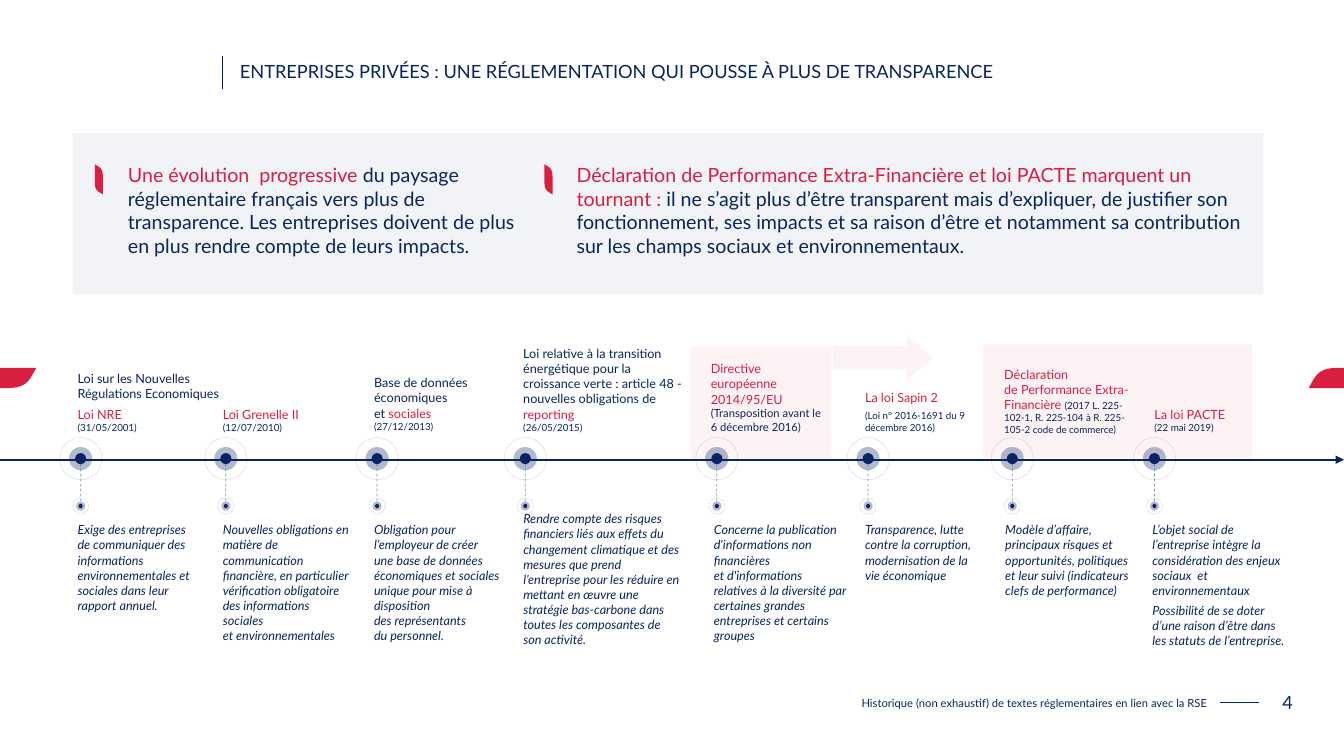
from copy import deepcopy
from dataclasses import dataclass

from lxml import etree
from pptx import Presentation
from pptx.dml.color import RGBColor
from pptx.enum.dml import MSO_LINE
from pptx.enum.shapes import MSO_CONNECTOR, MSO_SHAPE as Shape
from pptx.enum.text import MSO_ANCHOR as Anchor, MSO_AUTO_SIZE, PP_ALIGN as Align
from pptx.oxml.ns import qn
from pptx.util import Inches, Pt


@dataclass(frozen=True)
class Theme:
    font: str = "Lato"
    navy: RGBColor = RGBColor(0x09, 0x24, 0x62)
    red: RGBColor = RGBColor(0xD9, 0x1F, 0x41)
    ring: RGBColor = RGBColor(0x0A, 0x24, 0x63)
    title: int = 13
    callout: int = 14
    label: int = 9
    note: int = 8
    date: int = 7


theme = Theme()
NAVY, RED = theme.navy, theme.red
LABEL, NOTE, DATE = theme.label, theme.note, theme.date


def fill_text(box, paras, anchor=Anchor.TOP, align=Align.LEFT, inset=0.03, italic=False, wrap=True):
    """Write paragraphs of (text, size, colour) spans; a newline in a span is a line break."""
    frame = box.text_frame
    frame.word_wrap, frame.auto_size, frame.vertical_anchor = wrap, MSO_AUTO_SIZE.NONE, anchor
    frame.margin_left = frame.margin_right = Inches(inset)
    frame.margin_top = frame.margin_bottom = Inches(min(inset, 0.05))
    for index, spans in enumerate(paras):
        para = frame.add_paragraph() if index else frame.paragraphs[0]
        para.alignment = align
        if index:
            para.space_before = Pt(3.6)
        for text, size, color in spans:
            for number, piece in enumerate(text.split("\n")):
                if number:
                    para.add_line_break()
                if piece:
                    span = para.add_run()
                    span.text = piece
                    span.font.name, span.font.size = theme.font, Pt(size)
                    span.font.color.rgb, span.font.italic = color, italic
        for line_break in para._p.findall(qn("a:br")):
            line_break.append(deepcopy(para.runs[0]._r.rPr))


def add_preset(kind, place, color, alpha=100, outline=False):
    shape = page.shapes.add_shape(kind, *map(Inches, place))
    shape.shadow.inherit = False
    if outline:
        shape.fill.background()
        shape.line.color.rgb, shape.line.width = color, Pt(0.25)
    else:
        shape.fill.solid()
        shape.fill.fore_color.rgb = color
        shape.line.fill.background()
    if alpha < 100:
        for tint in shape._element.spPr.iter(qn("a:srgbClr")):
            etree.SubElement(tint, qn("a:alpha"), val=str(alpha * 1000))
    return shape


deck = Presentation()
deck.slide_width, deck.slide_height = Inches(13.33), Inches(7.5)
page = deck.slides.add_slide(deck.slide_layouts[5])

title = page.shapes.title
title.left, title.top, title.width, title.height = map(Inches, (2.18, 0.52, 10.32, 0.38))
fill_text(title, [[("ENTREPRISES PRIVÉES : UNE RÉGLEMENTATION QUI POUSSE À PLUS DE TRANSPARENCE",
                    theme.title, NAVY)]], Anchor.MIDDLE, inset=0.1)
title.text_frame.margin_left = Inches(0.2)

# Tinted panels and the arrow between them
add_preset(Shape.RECTANGLE, (6.85, 3.44, 1.4, 1.11), RED, 5)
add_preset(Shape.RECTANGLE, (9.75, 3.42, 2.67, 1.12), RED, 5)
add_preset(Shape.RECTANGLE, (0.72, 1.32, 11.81, 1.6), NAVY, 5)
arrow = add_preset(Shape.RIGHT_ARROW, (8.26, 3.32, 1, 0.46), RED, 5)
arrow.adjustments[1] = 0.585

# Leaves: half an outline, the other half being its point reflection
edge_leaf = [(0, 0.2), (0.44, 0.2), (0.64, 0.2), (0.66, 0.1), (0.72, 0)]
bullet_leaf = [(0.08, 0.3), (0.08, 0.12), (0.08, 0.03), (0.04, 0.03), (0, 0)]
STEPS = 12
for left, top, half in [(-0.36, 3.65, edge_leaf), (12.98, 3.65, edge_leaf),
                        (0.94, 1.63, bullet_leaf), (5.4, 1.63, bullet_leaf)]:
    (width, height) = (max(axis) for axis in zip(*half))
    outline = []
    for side in (half, [(width - x, height - y) for x, y in half]):
        outline.append(side[0])
        for step in range(STEPS + 1):
            t = step / STEPS
            weights = ((1 - t) ** 3, 3 * t * (1 - t) ** 2, 3 * t * t * (1 - t), t ** 3)
            outline.append(tuple(sum(w * p for w, p in zip(weights, axis)) for axis in zip(*side[1:])))
    points = [(Inches(left + x), Inches(top + y)) for x, y in outline]
    builder = page.shapes.build_freeform(*points[0])
    builder.add_line_segments(points[1:], close=True)
    leaf = builder.convert_to_shape()
    leaf.shadow.inherit = False
    leaf.fill.solid()
    leaf.fill.fore_color.rgb = RED
    leaf.line.fill.background()

callouts = [
    ((1.17, 1.57, 4.25, 1.04), "Une évolution  progressive ",
     "du paysage réglementaire français vers plus de transparence. Les entreprises doivent de plus "
     "en plus rendre compte de leurs impacts."),
    ((5.62, 1.57, 6.86, 1.04),
     "Déclaration de Performance Extra-Financière et loi PACTE marquent un tournant :",
     " il ne s’agit plus d’être transparent mais d’expliquer, de justifier son fonctionnement, ses impacts "
     "et sa raison d’être et notamment sa contribution sur les champs sociaux et environnementaux."),
]
for place, lead, rest in callouts:
    box = page.shapes.add_textbox(*map(Inches, place))
    fill_text(box, [[(lead, theme.callout, RED), (rest, theme.callout, NAVY)]], inset=0.1)

# Milestones: marker centre, label place, label paragraphs, description place, description paragraphs
milestones = [
    (0.8, (0.74, 3.4, 1.54, 0.93),
     [[("Loi sur les Nouvelles Régulations Economiques", LABEL, NAVY)],
      [("Loi NRE\n", LABEL, RED), ("(31/05/2001)", DATE, NAVY)]],
     (0.74, 5.15, 1.26, 1.19),
     ["Exige des entreprises \nde communiquer des informations environnementales et sociales "
      "dans leur rapport annuel."]),
    (2.24, (2.18, 3.97, 1.58, 0.36),
     [[("Loi Grenelle II\n", LABEL, RED), ("(12/07/2010)", DATE, NAVY)]],
     (2.18, 5.15, 1.32, 1.04),
     ["Nouvelles obligations en matière de communication financière, en particulier vérification "
      "obligatoire des informations sociales \net environnementales"]),
    (3.74, (3.68, 3.61, 1.18, 0.71),
     [[("Base de données économiques \net ", LABEL, NAVY), ("sociales\n", LABEL, RED),
       ("(27/12/2013)", DATE, NAVY)]],
     (3.68, 5.15, 1.46, 1.39),
     ["Obligation pour l’employeur de créer \nune base de données économiques et sociales unique "
      "pour mise à disposition \ndes représentants \ndu personnel."]),
    (5.21, (5.16, 3.27, 1.67, 1.06),
     [[("Loi relative à la transition énergétique pour la croissance verte : article 48 - "
        "nouvelles obligations de ", LABEL, NAVY), ("reporting\n", LABEL, RED),
       ("(26/05/2015)", DATE, NAVY)]],
     (5.16, 5.04, 1.61, 1.85),
     ["Rendre compte des risques financiers liés aux effets du changement climatique et des mesures "
      "que prend l’entreprise pour les réduire en mettant en œuvre une stratégie bas-carbone dans "
      "toutes les composantes de son activité."]),
    (7.11, (7.02, 3.48, 1.19, 0.85),
     [[("Directive européenne 2014/95/EU ", LABEL, RED),
       ("(Transposition avant le 6 décembre 2016)", NOTE, NAVY)]],
     (7.05, 5.15, 1.39, 1.51),
     ["Concerne la publication d'informations non financières \net d'informations relatives à la "
      "diversité par certaines grandes entreprises et certains groupes"]),
    (8.61, (8.55, 3.83, 1.17, 0.5),
     [[("La loi Sapin 2", LABEL, RED)], [("(Loi n° 2016-1691 du 9 décembre 2016)", DATE, NAVY)]],
     (8.55, 5.15, 1.17, 0.68),
     ["Transparence, lutte contre la corruption, modernisation de la vie économique"]),
    (10.04, (9.93, 3.39, 1.3, 0.96),
     [[("Déclaration \nde Performance Extra-Financière ", LABEL, RED),
       ("(2017 L. 225-102-1, R. 225-104 à R. 225-105-2 code de commerce)", DATE, NAVY)]],
     (9.94, 5.15, 1.39, 1.02),
     ["Modèle d’affaire, principaux risques et opportunités, politiques et leur suivi (indicateurs "
      "clefs de performance)"]),
    (11.45, (11.42, 3.97, 1.3, 0.36),
     [[("La loi PACTE \n", LABEL, RED), ("(22 mai 2019)", DATE, NAVY)]],
     (11.4, 5.15, 1.43, 1.61),
     ["L’objet social de l’entreprise intègre la considération des enjeux sociaux  et environnementaux",
      "Possibilité de se doter d’une raison d’être dans les statuts de l’entreprise."]),
]

# Title rule, page number rule, time axis and dashed stems
lines = [((2.2, 0.56, 2.2, 0.88), 0.35, "rule"), ((12.1, 6.97, 12.49, 6.97), 0.35, "rule"),
         ((-0.17, 4.56, 13.33, 4.56), 1.25, "axis")]
lines += [((center, 4.5, center, 5.05), 0.5, "stem") for center, *_ in milestones]
for ends, width, role in lines:
    line = page.shapes.add_connector(MSO_CONNECTOR.STRAIGHT, *map(Inches, ends))
    line.line.color.rgb, line.line.width = NAVY, Pt(width)
    properties = line._element.spPr
    if role == "stem":
        line.line.dash_style = MSO_LINE.DASH
        etree.SubElement(next(properties.iter(qn("a:srgbClr"))), qn("a:alpha"), val="50000")
    if role == "axis":
        etree.SubElement(properties.find(qn("a:ln")), qn("a:tailEnd"), type="triangle")
    etree.SubElement(properties, qn("a:effectLst"))

for center, label_place, label, body_place, body in milestones:
    for middle, halo, dot, ring in [(4.55, 0.23, 0.11, 0.42), (5.02, 0.09, 0.04, 0.16)]:
        for size, color, alpha, outline in [(halo, NAVY, 31, False), (dot, NAVY, 100, False),
                                            (ring, theme.ring, 20, True)]:
            place = (center - size / 2, middle - size / 2, size, size)
            add_preset(Shape.OVAL, place, color, alpha, outline)
    fill_text(page.shapes.add_textbox(*map(Inches, label_place)), label, Anchor.BOTTOM)
    fill_text(page.shapes.add_textbox(*map(Inches, body_place)),
              [[(text, LABEL, NAVY)] for text in body], italic=True)

caption = page.shapes.add_textbox(*map(Inches, (7.26, 6.84, 4.75, 0.26)))
fill_text(caption, [[("Historique (non exhaustif) de textes réglementaires en lien avec la RSE", NOTE, NAVY)]],
          Anchor.MIDDLE, Align.RIGHT)
number = page.shapes.add_textbox(*map(Inches, (12.52, 6.81, 0.5, 0.32)))
fill_text(number, [[("4", theme.title, NAVY)]], Anchor.MIDDLE, Align.CENTER, inset=0.1, wrap=False)

deck.save("out.pptx")
